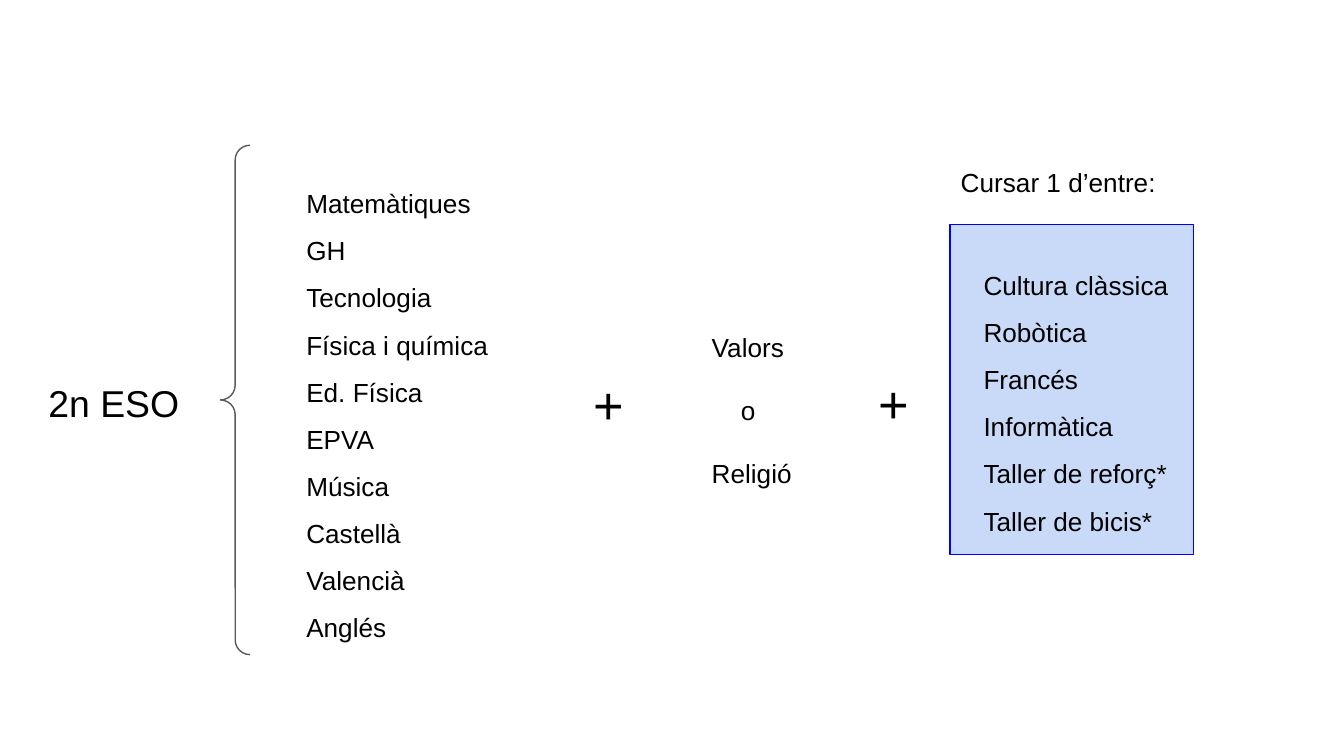
from dataclasses import dataclass

from pptx import Presentation
from pptx.dml.color import RGBColor
from pptx.enum import shapes, text
from pptx.util import Pt


@dataclass(frozen=True)
class Theme:
    font: str = "Arial"
    ink: RGBColor = RGBColor(0, 0, 0)
    panel: RGBColor = RGBColor(0xC9, 0xDA, 0xF8)
    panel_edge: RGBColor = RGBColor(0, 0, 0xFF)
    brace: RGBColor = RGBColor(0x59, 0x59, 0x59)
    body: int = 14
    course: int = 20
    plus: int = 28
    inset: float = 7.2
    edge: float = 0.75


THEME = Theme()

CORE_SUBJECTS = [
    "Matemàtiques", "GH", "Tecnologia", "Física i química", "Ed. Física",
    "EPVA", "Música", "Castellà", "Valencià", "Anglés",
]
ELECTIVES = [
    "Cultura clàssica", "Robòtica", "Francés", "Informàtica",
    "Taller de reforç*", "Taller de bicis*",
]


def write(frame, lines, size=THEME.body, spacing=1.0, gap=0, indents=None):
    frame.word_wrap = True
    frame.auto_size = text.MSO_AUTO_SIZE.NONE
    frame.vertical_anchor = text.MSO_ANCHOR.TOP
    frame.margin_left = frame.margin_right = Pt(THEME.inset)
    frame.margin_top = frame.margin_bottom = Pt(THEME.inset)
    frame.text = "\n".join(lines)
    for index, paragraph in enumerate(frame.paragraphs):
        paragraph.alignment = text.PP_ALIGN.LEFT
        paragraph.line_spacing = spacing
        paragraph.space_before = Pt(gap if index else 0)
        paragraph.font.name = THEME.font
        paragraph.font.size = Pt(size)
        paragraph.font.color.rgb = THEME.ink
        if indents:
            properties = paragraph._p.get_or_add_pPr()
            properties.set("marL", str(Pt(indents[index])))
            properties.set("indent", "0")


def add_text(slide, box, lines, **style):
    label = slide.shapes.add_textbox(*map(Pt, box))
    write(label.text_frame, lines, **style)


def add_outlined(slide, preset, box, edge, fill=None):
    outlined = slide.shapes.add_shape(preset, *map(Pt, box))
    outlined.shadow.inherit = False
    outlined.line.color.rgb = edge
    outlined.line.width = Pt(THEME.edge)
    if fill is None:
        outlined.fill.background()
    else:
        outlined.fill.solid()
        outlined.fill.fore_color.rgb = fill
    return outlined


def set_title(slide, box, title):
    course = slide.shapes.title
    course.left, course.top, course.width, course.height = map(Pt, box)
    write(course.text_frame, [title], size=THEME.course)


def main():
    deck = Presentation()
    deck.slide_width, deck.slide_height = Pt(720), Pt(405)
    slide = deck.slides.add_slide(deck.slide_layouts.get_by_name("Title Only"))

    set_title(slide, (18.7, 196.6, 114.5, 23), "2n ESO")
    brace = add_outlined(slide, shapes.MSO_SHAPE.LEFT_BRACE,
                         (118.1, 77.8, 15.8, 272.9), THEME.brace)
    brace.adjustments[0] = brace.adjustments[1] = 0.5
    add_text(slide, (157, 85, 153.4, 101.5), CORE_SUBJECTS, spacing=1.5)

    for left, top in ((311, 192.2), (463.7, 191.5)):
        add_text(slide, (left, top, 33.1, 30.2), ["+"], size=THEME.plus)
    add_text(slide, (358.6, 170.6, 97.9, 84.2), ["Valors", "o", "Religió"],
             gap=16.9, indents=(15.6, 31.2, 15.6))

    add_text(slide, (507.6, 82.1, 122.4, 16.6), ["Cursar 1 d’entre:"])
    add_outlined(slide, shapes.MSO_SHAPE.RECTANGLE, (509, 120.2, 130.5, 177),
                 THEME.panel_edge, THEME.panel)
    add_text(slide, (519.8, 128.9, 131, 210.2), ELECTIVES, spacing=1.5)

    deck.save("out.pptx")


if __name__ == "__main__":
    main()
